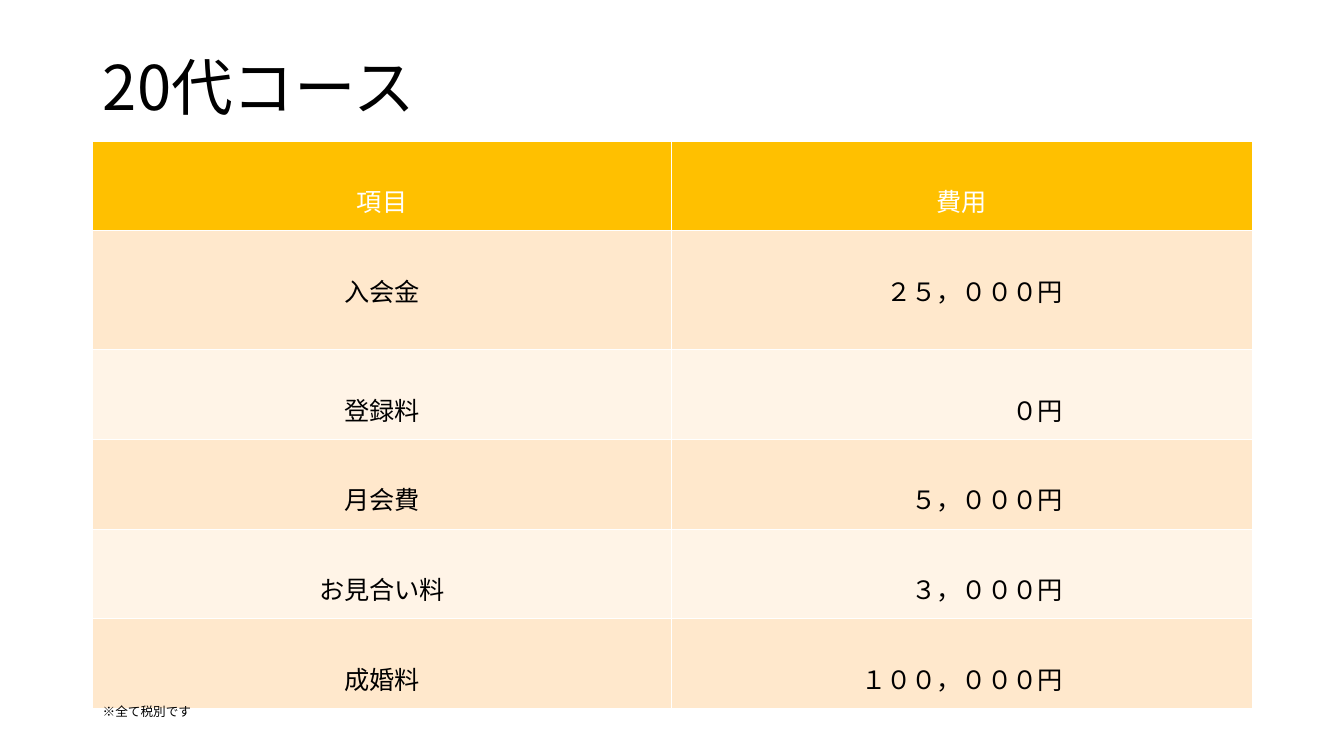
import pptx
import pptx.util
import pptx.dml.color
import pptx.enum.text
import pptx.oxml
import pptx.oxml.ns

Inches, Pt = pptx.util.Inches, pptx.util.Pt
ALIGN = pptx.enum.text.PP_ALIGN
ANCHOR = pptx.enum.text.MSO_ANCHOR
FIT = pptx.enum.text.MSO_AUTO_SIZE

# Content
TITLE = "20代コース"
NOTE = "※全て税別です"
FEES = [
    ("項目", "費用"),
    ("入会金", "２５，０００円"),
    ("登録料", "０円"),
    ("月会費", "５，０００円"),
    ("お見合い料", "３，０００円"),
    ("成婚料", "１００，０００円"),
]

# Formats
FACE = "Noto Sans CJK JP"
HEAD, DARK, PALE = "FFC000", "FFE8CC", "FFF4E7"
BLACK, WHITE = "000000", "FFFFFF"
LEFT, WIDE = 0.92, 11.5
COLS = [5.74, 5.76]
ROW, TALL = 0.89, 1.18
CELL = {"margin_top": Inches(0.41), "margin_bottom": Inches(0.05),
        "vertical_anchor": ANCHOR.TOP}
INSET = Inches(1.88)


def color(code):
    return pptx.dml.color.RGBColor.from_string(code)


def write(frame, text, size, tint, align=ALIGN.LEFT):
    """Put one styled line of text into a frame."""
    para = frame.paragraphs[0]
    para.alignment = align
    run = para.add_run()
    run.text = text
    look = {"name": FACE, "size": Pt(size), "bold": False}
    for key, value in look.items():
        setattr(run.font, key, value)
    run.font.color.rgb = color(tint)
    east = pptx.oxml.parse_xml(
        f'<a:ea {pptx.oxml.ns.nsdecls("a")} typeface="{FACE}"/>')
    run.font._element.find(pptx.oxml.ns.qn("a:latin")).addnext(east)
    return para


def edge(cell):
    """Draw thin white borders on all four sides."""
    props = cell._tc.get_or_add_tcPr()
    for spot, side in enumerate(("lnL", "lnR", "lnT", "lnB")):
        props.insert(spot, pptx.oxml.parse_xml(
            f'<a:{side} {pptx.oxml.ns.nsdecls("a")} w="12700"><a:solidFill>'
            f'<a:srgbClr val="{WHITE}"/></a:solidFill></a:{side}>'))


deck = pptx.Presentation()
deck.slide_width, deck.slide_height = Inches(13.33), Inches(7.5)
slide = deck.slides.add_slide(deck.slide_layouts[5])

# Title
title = slide.shapes.title
place = {"left": LEFT, "top": 0.17, "width": WIDE, "height": 1.45}
for key, value in place.items():
    setattr(title, key, Inches(value))
title.text_frame.auto_size = FIT.NONE
title.text_frame.vertical_anchor = ANCHOR.MIDDLE
write(title.text_frame, TITLE, 44, BLACK).line_spacing = 0.9

# Fee table: the first fee has a taller row
highs = [TALL if n == 1 else ROW for n in range(len(FEES))]
table = slide.shapes.add_table(
    len(FEES), len(COLS), Inches(LEFT), Inches(1.4),
    Inches(WIDE), Inches(sum(highs))).table
for col, width in zip(table.columns, COLS):
    col.width = Inches(width)
for n, (fee, high) in enumerate(zip(FEES, highs)):
    table.rows[n].height = Inches(high)
    fill = HEAD if n == 0 else DARK if n % 2 else PALE
    for c, text in enumerate(fee):
        cell = table.cell(n, c)
        for key, value in CELL.items():
            setattr(cell, key, value)
        cell.fill.solid()
        cell.fill.fore_color.rgb = color(fill)
        edge(cell)
        price = n > 0 and c == 1
        if price:
            cell.margin_right = INSET
        write(cell.text_frame, text, 18, BLACK if n else WHITE,
              ALIGN.RIGHT if price else ALIGN.CENTER)

# Tax note
note = slide.shapes.add_textbox(
    Inches(LEFT), Inches(6.93), Inches(2.08), Inches(0.25))
note.text_frame.word_wrap = True
write(note.text_frame, NOTE, 9, BLACK)

deck.save("out.pptx")
